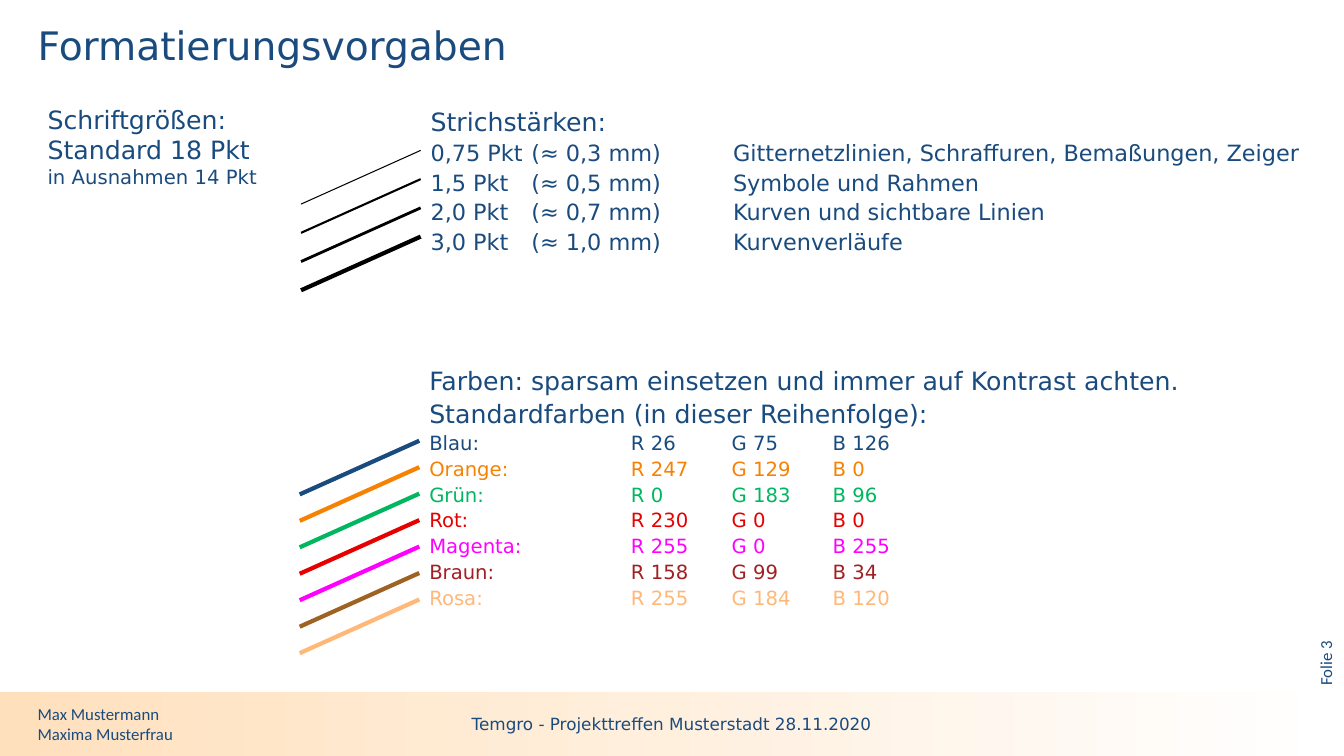
from dataclasses import dataclass

from lxml.etree import SubElement
from pptx import Presentation
from pptx.dml.color import RGBColor
from pptx.enum.shapes import MSO_CONNECTOR, MSO_SHAPE
from pptx.enum.text import MSO_ANCHOR, MSO_AUTO_SIZE, PP_ALIGN
from pptx.oxml.ns import qn
from pptx.util import Inches, Pt

SLIDE_WIDTH, SLIDE_HEIGHT = Inches(13.33), Inches(7.5)


@dataclass(frozen=True)
class Theme:
    blue: RGBColor = RGBColor(26, 75, 126)
    orange: RGBColor = RGBColor(247, 129, 0)
    green: RGBColor = RGBColor(0, 183, 96)
    red: RGBColor = RGBColor(230, 0, 0)
    magenta: RGBColor = RGBColor(255, 0, 255)
    brown: RGBColor = RGBColor(158, 99, 34)
    brown_text: RGBColor = RGBColor(160, 32, 35)
    pink: RGBColor = RGBColor(255, 184, 120)
    black: RGBColor = RGBColor(0, 0, 0)
    white: RGBColor = RGBColor(255, 255, 255)
    footer: RGBColor = RGBColor(255, 224, 189)
    font: str = "DejaVu Sans"
    footer_font: str = "Calibri"
    title: int = 28
    standard: int = 18
    medium: int = 16
    small: int = 14
    tiny: int = 12


THEME = Theme()


@dataclass(frozen=True)
class Box:
    """An area in hundredths of the slide's width and height."""
    left: float
    top: float
    width: float
    height: float

    def place(self):
        return (columns(self.left), rows(self.top),
                columns(self.width), rows(self.height))


@dataclass(frozen=True)
class Line:
    text: str
    size: int
    color: RGBColor = THEME.blue
    font: str = THEME.font


def columns(count):
    return round(SLIDE_WIDTH * count / 100)


def rows(count):
    return round(SLIDE_HEIGHT * count / 100)


def set_tabs(paragraph, stops):
    tab_list = SubElement(paragraph._p.get_or_add_pPr(), qn("a:tabLst"))
    for stop in stops:
        SubElement(tab_list, qn("a:tab"), pos=str(Inches(stop)), algn="l")


def write_lines(frame, lines, spacing=1.0, align=PP_ALIGN.LEFT, tabs=()):
    frame.word_wrap = True
    frame.auto_size = MSO_AUTO_SIZE.NONE
    frame.vertical_anchor = MSO_ANCHOR.MIDDLE
    for index, line in enumerate(lines):
        paragraph = frame.add_paragraph() if index else frame.paragraphs[0]
        paragraph.text = line.text
        if tabs:
            set_tabs(paragraph, tabs)
        paragraph.line_spacing = spacing
        paragraph.alignment = align
        font = paragraph.font
        font.name, font.size, font.color.rgb = line.font, Pt(line.size), line.color


def add_text(slide, box, lines, inset=True, **layout):
    shape = slide.shapes.add_textbox(*box.place())
    frame = shape.text_frame
    if not inset:
        frame.margin_left = frame.margin_right = 0
        frame.margin_top = frame.margin_bottom = 0
    write_lines(frame, lines, **layout)
    return shape


def add_samples(slide, box, first_row, pitch, styles):
    """Draw one slanted sample per (colour, weight), ending at the box's left edge."""
    for index, (color, weight) in enumerate(styles):
        end = box.top + first_row + index * pitch
        sample = slide.shapes.add_connector(
            MSO_CONNECTOR.STRAIGHT, columns(box.left - 8.9), rows(end + 7.1),
            columns(box.left), rows(end))
        sample.line.color.rgb = color
        sample.line.width = Pt(weight)
        SubElement(sample._element.spPr, qn("a:effectLst"))


def add_title(slide, box):
    title = slide.shapes.title
    title.left, title.top, title.width, title.height = box.place()
    title.text_frame.margin_left = title.text_frame.margin_right = 0
    write_lines(title.text_frame, [Line("Formatierungsvorgaben", THEME.title)],
                spacing=0.9)


def add_font_sizes(slide, box):
    add_text(slide, box, [
        Line("Schriftgrößen:", THEME.standard),
        Line("Standard 18 Pkt", THEME.standard),
        Line("in Ausnahmen 14 Pkt", THEME.small)])


def add_line_weights(slide, box):
    weights = [
        (0.75, "0,75 Pkt\t(≈ 0,3 mm)\tGitternetzlinien, Schraffuren, Bemaßungen, Zeiger"),
        (1.5, "1,5 Pkt\t(≈ 0,5 mm)\tSymbole und Rahmen"),
        (2, "2,0 Pkt\t(≈ 0,7 mm)\tKurven und sichtbare Linien"),
        (3, "3,0 Pkt\t(≈ 1,0 mm)\tKurvenverläufe")]
    lines = [Line("Strichstärken:", THEME.standard)]
    lines += [Line(text, THEME.medium) for _, text in weights]
    add_samples(slide, box, 6.8, 3.8, [(THEME.black, weight) for weight, _ in weights])
    add_text(slide, box, lines, spacing=1.1, tabs=(1, 3))


def add_colors(slide, box):
    palette = [
        ("Blau", THEME.blue, THEME.blue),
        ("Orange", THEME.orange, THEME.orange),
        ("Grün", THEME.green, THEME.green),
        ("Rot", THEME.red, THEME.red),
        ("Magenta", THEME.magenta, THEME.magenta),
        ("Braun", THEME.brown, THEME.brown_text),
        ("Rosa", THEME.pink, THEME.pink)]
    lines = [
        Line("Farben: sparsam einsetzen und immer auf Kontrast achten.", THEME.standard),
        Line("Standardfarben (in dieser Reihenfolge):", THEME.standard)]
    for name, (red, green, blue), text_color in palette:
        lines.append(Line(f"{name}:\tR {red}\tG {green}\tB {blue}",
                          THEME.small, text_color))
    add_samples(slide, box, 11.1, 3.5, [(color, 3) for _, color, _ in palette])
    add_text(slide, box, lines, spacing=1.1, tabs=(2, 3, 4))


def add_footer(slide, box):
    band = slide.shapes.add_shape(MSO_SHAPE.RECTANGLE, *box.place())
    band.shadow.inherit = False
    band.line.fill.background()
    band.fill.gradient()
    band.fill.gradient_angle = 0
    for stop, color in zip(band.fill.gradient_stops, (THEME.footer, THEME.white)):
        stop.color.rgb = color

    text_top = box.top + 1.6
    add_text(slide, Box(box.left + 2.8, text_top, 33.75, 5.3),
             [Line(name, THEME.tiny, font=THEME.footer_font)
              for name in ("Max Mustermann", "Maxima Musterfrau")], inset=False)
    add_text(slide, Box(box.left + 33.1, text_top, 33.75, 5.3),
             [Line("Temgro - Projekttreffen Musterstadt 28.11.2020", THEME.tiny)],
             inset=False, align=PP_ALIGN.CENTER)


def add_page_number(slide, box):
    number = add_text(slide, box, [Line("Folie 3", THEME.tiny, font=THEME.footer_font)])
    number.rotation = 270


def main():
    presentation = Presentation()
    presentation.slide_width, presentation.slide_height = SLIDE_WIDTH, SLIDE_HEIGHT
    slide = presentation.slides.add_slide(presentation.slide_layouts[5])
    add_footer(slide, Box(0, 91.5, 99.6, 8.6))
    add_title(slide, Box(2.8, 3.5, 94.5, 5.6))
    add_font_sizes(slide, Box(2.8, 13.1, 17.3, 12.5))
    add_line_weights(slide, Box(31.3, 13.1, 71.3, 21.2))
    add_colors(slide, Box(31.2, 47.2, 58.4, 34.1))
    add_page_number(slide, Box(94.65, 82.55, 7.95, 4.8))
    presentation.save("out.pptx")


if __name__ == "__main__":
    main()
